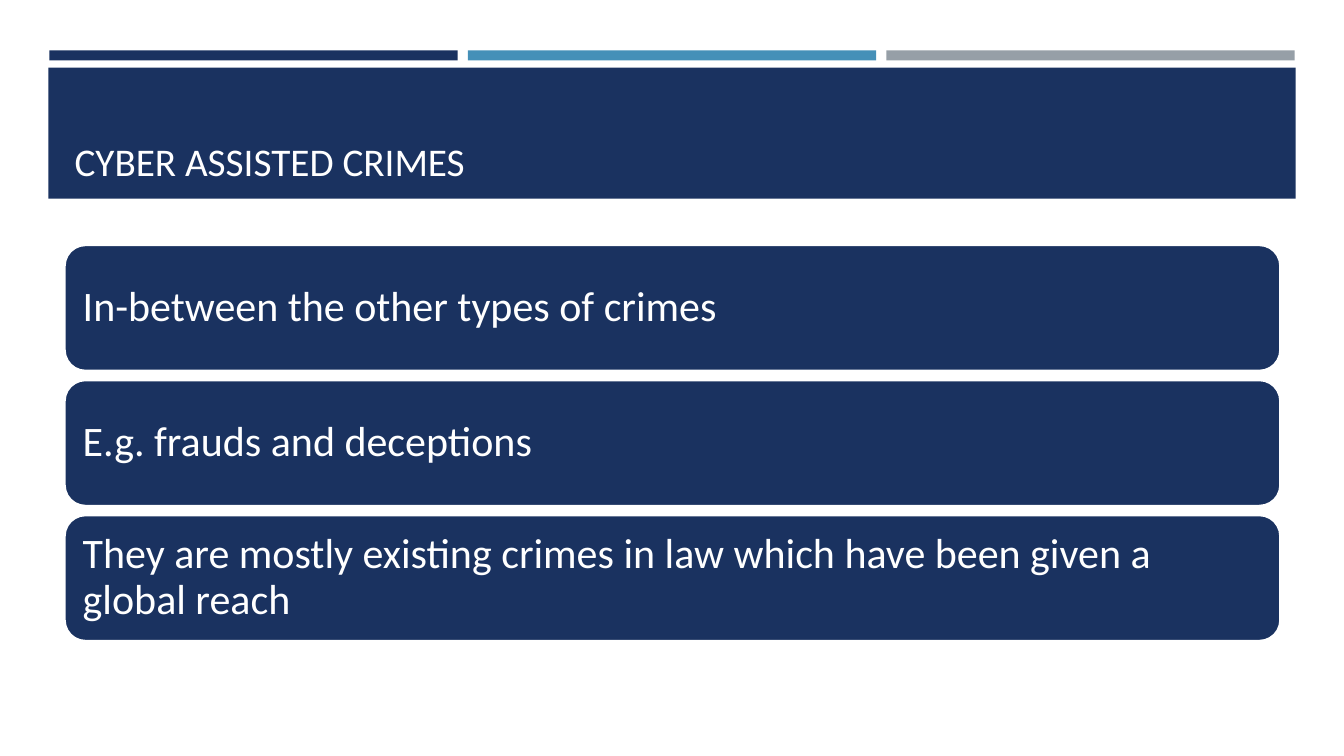
from dataclasses import dataclass

from pptx import Presentation
from pptx.dml.color import RGBColor
from pptx.enum.shapes import MSO_SHAPE
from pptx.enum.text import MSO_ANCHOR, PP_ALIGN
from pptx.util import Pt

RECT = MSO_SHAPE.RECTANGLE
ROUND = MSO_SHAPE.ROUNDED_RECTANGLE
MIDDLE = MSO_ANCHOR.MIDDLE
BOTTOM = MSO_ANCHOR.BOTTOM
LEFT = PP_ALIGN.LEFT
SCALE = 9144


@dataclass(frozen=True)
class Theme:
    navy: str = "1A3260"
    blue: str = "4590B8"
    grey: str = "969FA7"
    white: str = "FFFFFF"
    font: str = "Calibri"
    title: int = 28
    body: int = 30
    edge: float = 1.75


THEME = Theme()
TITLE = "CYBER ASSISTED CRIMES"
POINTS = [
    "In-between the other types of crimes",
    "E.g. frauds and deceptions",
    "They are mostly existing crimes in law which have been given a global reach",
]


def px(count):
    return round(count * SCALE)


def color(code):
    return RGBColor.from_string(code)


def add_block(slide, kind, box, fill):
    block = slide.shapes.add_shape(kind, *map(px, box))
    block.shadow.inherit = False
    block.fill.solid()
    block.fill.fore_color.rgb = color(fill)
    block.line.fill.background()
    return block


def set_text(shape, text, size, anchor, pad_x, pad_y):
    frame = shape.text_frame
    frame.text = text
    frame.word_wrap = True
    frame.vertical_anchor = anchor
    frame.margin_left = frame.margin_right = px(pad_x)
    frame.margin_top = frame.margin_bottom = px(pad_y)
    para = frame.paragraphs[0]
    para.alignment = LEFT
    para.font.name = THEME.font
    para.font.size = Pt(size)
    para.font.color.rgb = color(THEME.white)
    return para


def add_strips(slide, box, gap):
    left, top, width, height = box
    fills = [THEME.navy, THEME.blue, THEME.grey]
    size = (width - gap * (len(fills) - 1)) / len(fills)
    for i, fill in enumerate(fills):
        add_block(slide, RECT, (left + i * (size + gap), top, size, height), fill)


def add_header(slide, box):
    left, top, width, height = box
    add_block(slide, RECT, box, THEME.navy)
    title = slide.shapes.title
    title.left, title.top = px(left + 16), px(top + 10)
    title.width, title.height = px(width - 31), px(height - 19)
    set_text(title, TITLE, THEME.title, BOTTOM, 10, 5)
    tree = slide.shapes._spTree
    tree.remove(title._element)
    tree.append(title._element)


def add_cards(slide, box, gap):
    left, top, width, height = box
    size = (height - gap * (len(POINTS) - 1)) / len(POINTS)
    for i, point in enumerate(POINTS):
        place = (left, top + i * (size + gap), width, size)
        card = add_block(slide, ROUND, place, THEME.navy)
        card.line.color.rgb = color(THEME.white)
        card.line.width = Pt(THEME.edge)
        para = set_text(card, point, THEME.body, MIDDLE, 12, 12)
        para.line_spacing = 0.9


def main():
    deck = Presentation()
    deck.slide_width, deck.slide_height = px(1333), px(750)
    slide = deck.slides.add_slide(deck.slide_layouts[5])
    add_strips(slide, (49, 50, 1235, 10), 10)
    add_header(slide, (48, 67, 1237, 130))
    add_cards(slide, (64, 243, 1206, 393), 9)
    deck.save("out.pptx")


if __name__ == "__main__":
    main()
